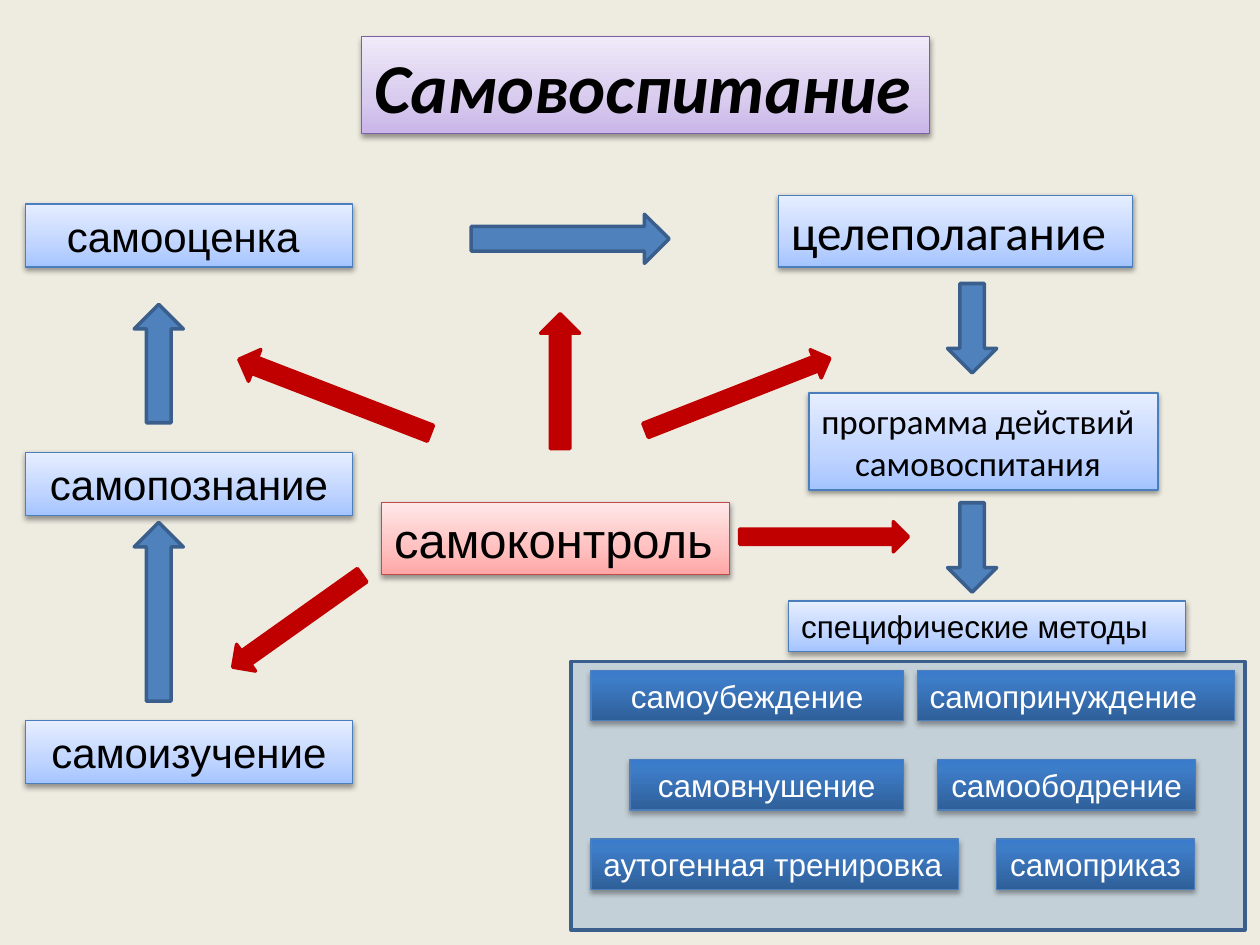
from dataclasses import dataclass

from lxml import etree
from pptx import Presentation
from pptx import util as u
from pptx.dml.color import RGBColor
from pptx.enum import shapes, text
from pptx.oxml.ns import qn

COLUMNS, ROWS = 100, 75
SHAPE = shapes.MSO_SHAPE
ALIGN = text.PP_ALIGN


@dataclass(frozen=True)
class Style:
    stops: tuple
    line: str
    ink: str = "000000"
    shadow_alpha: int = 38
    shadow_distance: float = 1.6


@dataclass(frozen=True)
class Theme:
    background: str = "EEECE1"
    blue: str = "4F81BD"
    blue_line: str = "3A5F8C"
    red: str = "C00000"
    sans: str = "Arial"
    title_font: str = "Calibri"
    title: int = 40
    key: int = 28
    step: int = 24
    plan: int = 20
    method: int = 18
    thin: float = 0.75
    thick: float = 2
    shadow_blur: float = 3.1
    violet_style: Style = Style(((0, "C9B5E8"), (35, "D8CBEE"), (100, "F0EAF9")), "7D60A0")
    blue_style: Style = Style(((0, "A4C4FF"), (35, "BFD4FF"), (100, "E6EEFF")), "4B7EBC")
    red_style: Style = Style(((0, "FFA6A5"), (35, "FFC0BF"), (100, "FFE7E7")), "BF4C48")
    dark_style: Style = Style(((0, "2F5F99"), (80, "3D7CC7"), (100, "3A7CCB")), "4B7EBC",
                              "FFFFFF", 35, 1.8)


@dataclass(frozen=True)
class Area:
    column: float
    row: float
    columns: float
    rows: float


@dataclass(frozen=True)
class Label:
    wording: str
    area: Area
    style: Style
    size: int
    font: str = "Arial"
    centred: bool = False
    wrap: bool = True


@dataclass(frozen=True)
class Arrow:
    area: Area
    kind: int = SHAPE.RIGHT_ARROW
    rotation: float = 0


THEME = Theme()


def rgb(value: str) -> RGBColor:
    return RGBColor.from_string(value)


def add_block(deck, page, kind: int, area: Area):
    across, down = deck.slide_width / COLUMNS, deck.slide_height / ROWS
    block = page.shapes.add_shape(
        kind, round(area.column * across), round(area.row * down),
        round(area.columns * across), round(area.rows * down))
    block.shadow.inherit = False
    return block


def paint(block, fill: str, line: str, width: float) -> None:
    block.fill.solid()
    block.fill.fore_color.rgb = rgb(fill)
    block.line.color.rgb = rgb(line)
    block.line.width = u.Pt(width)


def add_color(parent, value: str):
    return etree.SubElement(parent, qn("a:srgbClr"), val=value)


def add_alpha(color, percent: int) -> None:
    etree.SubElement(color, qn("a:alpha"), val=str(percent * 1000))


def apply_style(box, style: Style) -> None:
    box.fill.gradient()
    box.fill.gradient_angle = 90
    properties = box._element.spPr
    stops = properties.find(".//" + qn("a:gsLst"))
    for stop in list(stops):
        stops.remove(stop)
    for position, value in style.stops:
        add_color(etree.SubElement(stops, qn("a:gs"), pos=str(position * 1000)), value)
    box.line.color.rgb = rgb(style.line)
    box.line.width = u.Pt(THEME.thin)
    shadow = etree.SubElement(
        properties.find(qn("a:effectLst")), qn("a:outerShdw"),
        blurRad=str(u.Pt(THEME.shadow_blur)), dist=str(u.Pt(style.shadow_distance)),
        dir=str(90 * 60000), rotWithShape="0")
    add_alpha(add_color(shadow, "000000"), style.shadow_alpha)


def write(para, wording: str, *, size: int, font: str, color: str,
          align=ALIGN.LEFT, emphasis: bool = False) -> None:
    para.alignment = align
    span = para.add_run()
    span.text = wording
    span.font.size = u.Pt(size)
    span.font.name = font
    span.font.color.rgb = rgb(color)
    span.font.bold = span.font.italic = emphasis


def add_label(deck, page, label: Label) -> None:
    box = add_block(deck, page, SHAPE.RECTANGLE, label.area)
    apply_style(box, label.style)
    frame = box.text_frame
    frame.word_wrap = label.wrap
    frame.auto_size = text.MSO_AUTO_SIZE.SHAPE_TO_FIT_TEXT
    for index, wording in enumerate(label.wording.split("\n")):
        para = frame.add_paragraph() if index else frame.paragraphs[0]
        write(para, wording, size=label.size, font=label.font, color=label.style.ink,
              align=ALIGN.CENTER if label.centred or index else ALIGN.LEFT,
              emphasis=label.size == THEME.title)


def add_arrow(deck, page, arrow: Arrow, fill: str, line: str) -> None:
    block = add_block(deck, page, arrow.kind, arrow.area)
    paint(block, fill, line, THEME.thick)
    block.rotation = arrow.rotation


def step(wording: str, row: float) -> Label:
    return Label(wording, Area(2, row, 26, 5), THEME.blue_style, THEME.step, centred=True)


def method(wording: str, column: float, row: float, columns: float,
           centred: bool = True, wrap: bool = True) -> Label:
    return Label(wording, Area(column, row, columns, 4), THEME.dark_style, THEME.method,
                 centred=centred, wrap=wrap)


PANEL = Area(45.3, 52.5, 53.5, 21.3)
METHOD_ROWS = (53.2, 60.3, 66.6)
LABELS = (
    Label("Самовоспитание", Area(28.7, 2.9, 45.1, 7.7), THEME.violet_style, THEME.title,
          THEME.title_font, wrap=False),
    step("самооценка ", 16.2),
    step("самопознание", 35.9),
    step("самоизучение", 57.2),
    Label("целеполагание", Area(61.8, 15.5, 28.1, 5.7), THEME.blue_style, THEME.key,
          THEME.title_font, wrap=False),
    Label("самоконтроль", Area(30.3, 39.9, 27.6, 5.7), THEME.red_style, THEME.key, wrap=False),
    Label("программа действий\nсамовоспитания", Area(64.2, 31.2, 27.7, 7.7),
          THEME.blue_style, THEME.plan, THEME.title_font, wrap=False),
    Label("специфические методы", Area(62.6, 47.7, 31.5, 4), THEME.blue_style, THEME.method),
    method("самоубеждение", 46.9, METHOD_ROWS[0], 24.8),
    method("самопринуждение", 72.8, METHOD_ROWS[0], 25.2, centred=False),
    method("самовнушение", 50, METHOD_ROWS[1], 21.7),
    method("самоободрение", 74.4, METHOD_ROWS[1], 20.5, wrap=False),
    method("аутогенная тренировка", 46.9, METHOD_ROWS[2], 29.2, centred=False, wrap=False),
    method("самоприказ", 79.1, METHOD_ROWS[2], 15.7, wrap=False),
)
SEQUENCE_ARROWS = (
    Arrow(Area(5.5, 46.6, 14.2, 3.9), rotation=270),
    Arrow(Area(7.9, 26.9, 9.4, 3.9), rotation=270),
    Arrow(Area(37.4, 17, 15.7, 3.9)),
    *(Arrow(Area(75.2, row, 3.9, 7.1), SHAPE.DOWN_ARROW) for row in (22.5, 39.9)),
)
CONTROL_ARROWS = (
    Arrow(Area(42.9, 24.9, 3.1, 10.7), SHAPE.UP_ARROW),
    Arrow(Area(50.7, 30.1, 15.7, 2.4), rotation=338.6),
    Arrow(Area(58.7, 41.4, 13.4, 2.4)),
    Arrow(Area(17.3, 48, 12.6, 2.6), rotation=144.6),
    Arrow(Area(18.4, 30.1, 16.3, 2.7), rotation=201.1),
)


def main() -> None:
    deck = Presentation()
    deck.slide_width, deck.slide_height = u.Inches(10), u.Inches(7.5)
    page = deck.slides.add_slide(deck.slide_layouts[6])
    page.background.fill.solid()
    page.background.fill.fore_color.rgb = rgb(THEME.background)

    panel = add_block(deck, page, SHAPE.RECTANGLE, PANEL)
    paint(panel, THEME.blue, THEME.blue_line, THEME.thick)
    add_alpha(panel._element.spPr.find(qn("a:solidFill")).find(qn("a:srgbClr")), 26)
    for label in LABELS:
        add_label(deck, page, label)
    for arrow in SEQUENCE_ARROWS:
        add_arrow(deck, page, arrow, THEME.blue, THEME.blue_line)
    for arrow in CONTROL_ARROWS:
        add_arrow(deck, page, arrow, THEME.red, THEME.red)
    deck.save("out.pptx")


if __name__ == "__main__":
    main()
